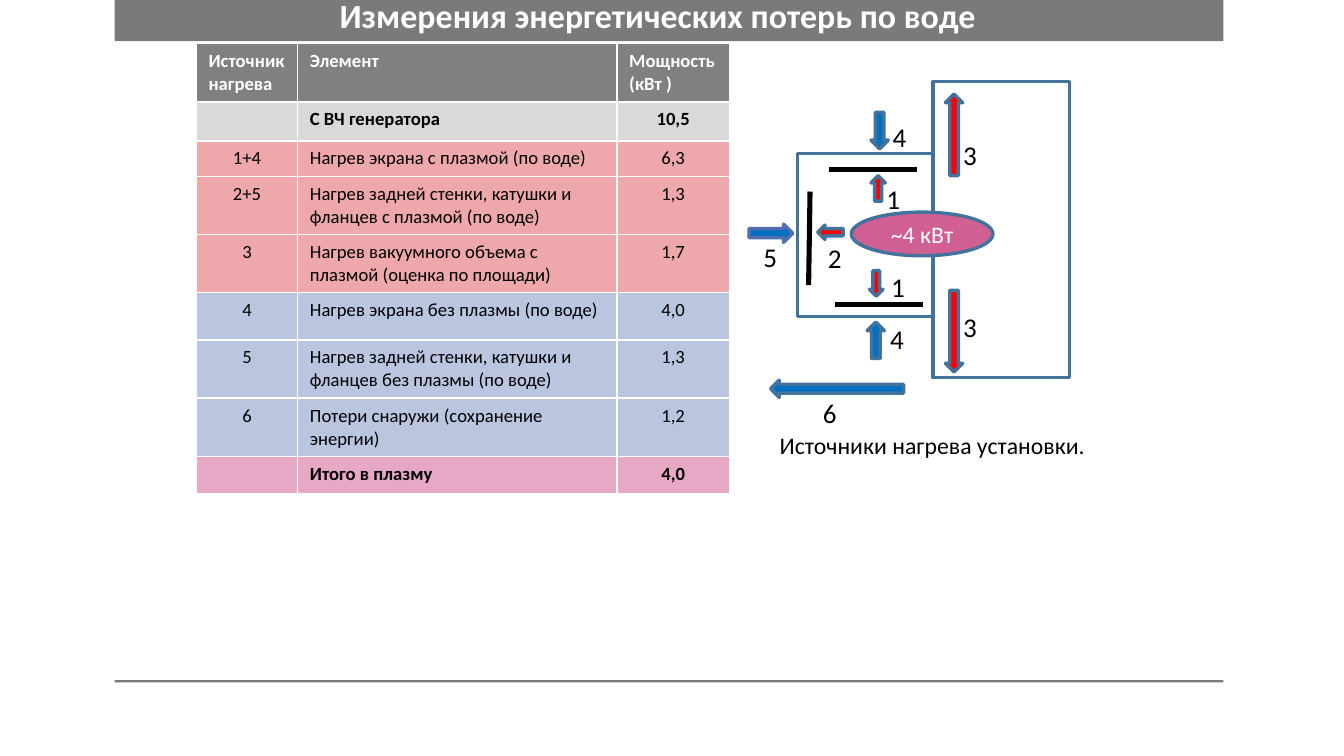
from lxml.etree import SubElement
from pptx import Presentation
from pptx.dml.color import RGBColor
from pptx.enum.shapes import MSO_CONNECTOR, MSO_SHAPE
from pptx.enum.text import MSO_ANCHOR, PP_ALIGN
from pptx.oxml.ns import qn
from pptx.util import Cm, Pt

TITLE = "Измерения энергетических потерь по воде"
CAPTION = "Источники нагрева установки."
FONT = "Calibri"
WHITE, BLACK, BAND = "FFFFFF", "000000", "7A7A7A"
EDGE, RED, BLUE = "43729D", "FF0000", "0070C0"
HEAD, GREY, PINK, PALE, ROSE = "808080", "D9D9D9", "EEA7AA", "BAC5DF", "E6A8C4"

# Table: source, element, power, fill, bold, row height
COLS = (2.11, 6.65, 2.34)
ROWS = [
    ("Источник нагрева", "Элемент", "Мощность(кВт )", HEAD, True, 1.21),
    ("", "C ВЧ генератора", "10,5", GREY, True, 0.81),
    ("1+4", "Нагрев экрана с плазмой (по воде)", "6,3", PINK, False, 0.74),
    ("2+5", "Нагрев задней стенки, катушки и фланцев с плазмой (по воде)",
     "1,3", PINK, False, 1.21),
    ("3", "Нагрев вакуумного объема с плазмой (оценка по площади)",
     "1,7", PINK, False, 1.21),
    ("4", "Нагрев экрана без плазмы (по воде)", "4,0", PALE, False, 0.98),
    ("5", "Нагрев задней стенки, катушки и фланцев без плазмы (по воде)",
     "1,3", PALE, False, 1.21),
    ("6", "Потери снаружи (сохранение энергии)", "1,2", PALE, False, 1.21),
    ("", "Итого в плазму", "4,0", ROSE, True, 0.79),
]

# Diagram: boxes are left, top, width, height
UP, DOWN = MSO_SHAPE.UP_ARROW, MSO_SHAPE.DOWN_ARROW
LEFT, RIGHT = MSO_SHAPE.LEFT_ARROW, MSO_SHAPE.RIGHT_ARROW
WALLS = [(16.61, 3.2, 2.82, 3.4), (19.43, 1.7, 2.84, 6.17)]
SCREENS = [(17.27, 3.53, 19.1, 3.53), (17.4, 6.35, 19.23, 6.35),
           (16.84, 5.94, 16.87, 3.99)]
ARROWS = [
    (DOWN, (18.11, 5.64, 0.28, 0.53), RED, EDGE),
    (UP, (18.14, 3.66, 0.3, 0.53), RED, EDGE),
    (LEFT, (17.03, 4.69, 0.53, 0.3), RED, EDGE),
    (UP, (19.69, 1.96, 0.36, 1.7), RED, EDGE),
    (DOWN, (19.69, 6.05, 0.36, 1.7), RED, EDGE),
    (UP, (18.06, 6.71, 0.36, 0.76), BLUE, EDGE),
    (DOWN, (18.14, 2.34, 0.36, 0.76), BLUE, EDGE),
    (LEFT, (16.05, 7.92, 2.77, 0.36), BLUE, EDGE),
    (RIGHT, (15.6, 4.67, 0.91, 0.38), BLUE, "526DB0"),
]
LABELS = [("1", 18.21, 3.68), ("1", 18.31, 5.51), ("2", 16.99, 4.9),
          ("3", 19.81, 2.77), ("3", 19.81, 6.35), ("4", 18.29, 6.6),
          ("4", 18.34, 2.39), ("5", 15.65, 4.88), ("6", 16.89, 8.13)]


def color(code):
    return RGBColor.from_string(code)


def place(box):
    return [Cm(n) for n in box]


def write(frame, text, size, tint, align=PP_ALIGN.LEFT, bold=False):
    frame.text = text
    para = frame.paragraphs[0]
    para.alignment = align
    for run in para.runs:
        font = run.font
        font.name, font.size, font.bold = FONT, Pt(size), bold
        font.color.rgb = color(tint)
    if not text:
        SubElement(para._p, qn("a:endParaRPr"), sz=str(size * 100))


def draw(shapes, kind, box, fill=None, edge=None):
    shape = shapes.add_shape(kind, *place(box))
    shape.shadow.inherit = False
    if fill:
        shape.fill.solid()
        shape.fill.fore_color.rgb = color(fill)
    else:
        shape.fill.background()
    if edge:
        shape.line.color.rgb = color(edge)
        shape.line.width = Pt(2)
    else:
        shape.line.fill.background()
    return shape


def label(shapes, box, text, size, align=PP_ALIGN.LEFT):
    frame = shapes.add_textbox(*place(box)).text_frame
    frame.word_wrap = True
    write(frame, text, size, BLACK, align)


def add_bands(slide):
    for top, high in ((0, 0.86), (14.17, 0.05)):
        draw(slide.shapes, MSO_SHAPE.RECTANGLE, (2.39, top, 23.09, high), BAND)


def add_title(slide):
    title = slide.shapes.title
    title.left, title.top, title.width, title.height = place((1.8, 0.05, 23.8, 0.8))
    frame = title.text_frame
    frame.margin_top = frame.margin_bottom = 0
    frame.vertical_anchor = MSO_ANCHOR.TOP
    write(frame, TITLE, 20, WHITE, PP_ALIGN.CENTER, True)
    frame.paragraphs[0].line_spacing = 0.8
    # Bring the title in front of the band
    title._element.getparent().append(title._element)


def add_losses(slide):
    high = sum(row[-1] for row in ROWS)
    box = place((4.09, 0.91, sum(COLS), high))
    table = slide.shapes.add_table(len(ROWS), len(COLS), *box).table
    for col, wide in zip(table.columns, COLS):
        col.width = Cm(wide)
    for r, (*texts, fill, bold, tall) in enumerate(ROWS):
        table.rows[r].height = Cm(tall)
        for c, text in enumerate(texts):
            cell = table.cell(r, c)
            cell.fill.solid()
            cell.fill.fore_color.rgb = color(fill)
            align = PP_ALIGN.LEFT if r == 0 or c == 1 else PP_ALIGN.CENTER
            write(cell.text_frame, text, 11, BLACK if r else WHITE, align, bold)


def add_scheme(slide):
    shapes = slide.shapes.add_group_shape().shapes
    # Chamber walls and screens
    for box in WALLS:
        draw(shapes, MSO_SHAPE.RECTANGLE, box, edge=EDGE)
    for ends in SCREENS:
        line = shapes.add_connector(MSO_CONNECTOR.STRAIGHT, *place(ends))
        line.line.color.rgb = color(BLACK)
        line.line.width = Pt(3)
        SubElement(line._element.spPr, qn("a:effectLst"))
    # Heat flows and their numbers
    for kind, box, fill, edge in ARROWS:
        draw(shapes, kind, box, fill, edge)
    for text, left, top in LABELS:
        label(shapes, (left, top, 0.81, 0.97), text, 16)
    # Plasma
    plasma = draw(shapes, MSO_SHAPE.OVAL, (17.73, 4.42, 2.95, 0.91), "D06093", EDGE)
    plasma.text_frame.vertical_anchor = MSO_ANCHOR.MIDDLE
    write(plasma.text_frame, "~4 кВт", 14, WHITE, PP_ALIGN.CENTER)


def main():
    deck = Presentation()
    deck.slide_width, deck.slide_height = Cm(27.99), Cm(15.75)
    slide = deck.slides.add_slide(deck.slide_layouts[5])
    add_bands(slide)
    add_losses(slide)
    add_scheme(slide)
    add_title(slide)
    label(slide.shapes, (14.02, 8.86, 10.8, 0.84), CAPTION, 14, PP_ALIGN.CENTER)
    deck.save("out.pptx")


if __name__ == "__main__":
    main()
